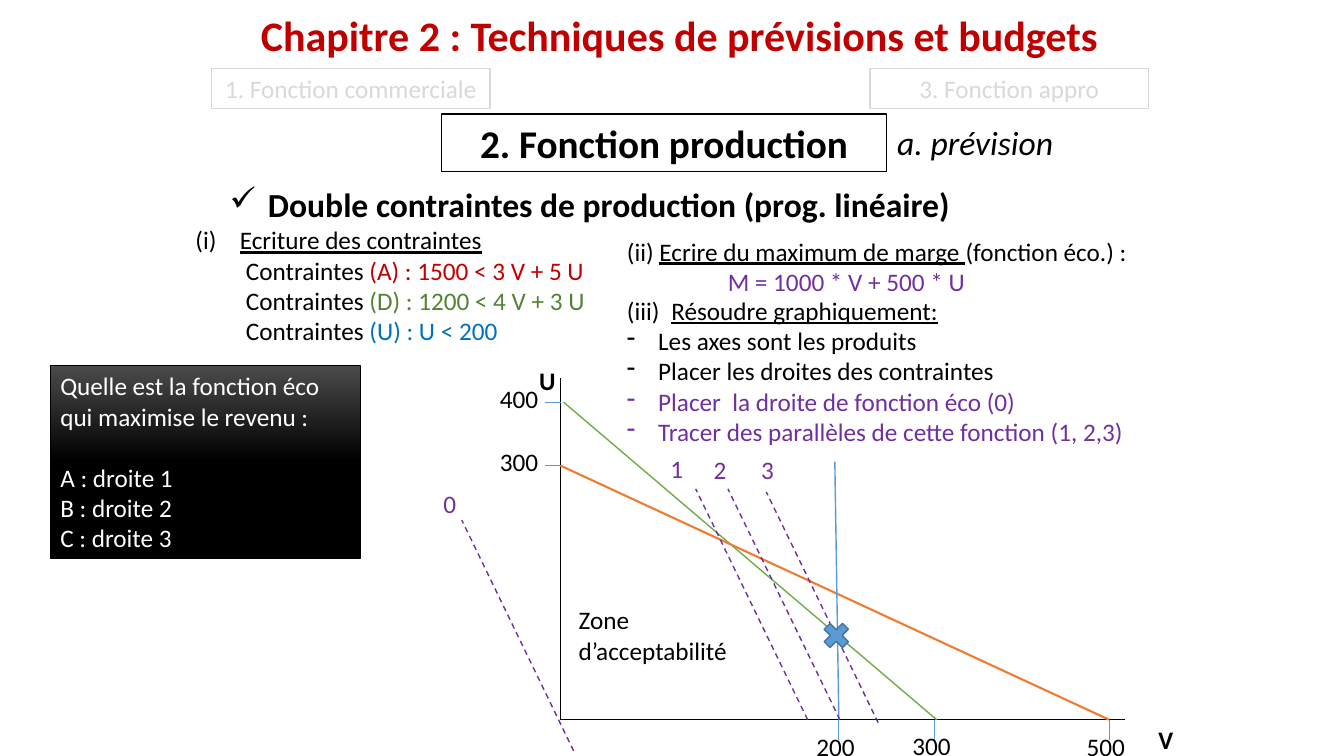
from lxml import etree
from pptx import Presentation, util as u
from pptx.dml.color import RGBColor
from pptx.enum import dml, shapes, text
from pptx.oxml.ns import qn

BLACK = RGBColor(0, 0, 0)
WHITE = RGBColor(255, 255, 255)
GREY = RGBColor(0xD9, 0xD9, 0xD9)
DARK = RGBColor(0x4B, 0x4B, 0x4B)
RED = RGBColor(0xC0, 0, 0)
MOSS = RGBColor(0x54, 0x82, 0x35)
GREEN = RGBColor(0x70, 0xAD, 0x47)
AZURE = RGBColor(0, 0x70, 0xC0)
BLUE = RGBColor(0x5B, 0x9B, 0xD5)
NAVY = RGBColor(0x43, 0x73, 0x9E)
PURPLE = RGBColor(0x70, 0x30, 0xA0)
ORANGE = RGBColor(0xED, 0x7D, 0x31)

# Content: a paragraph is (runs, layout), a run is (words, font values)
BOLD, LINE = {"bold": True}, {"underline": True}
VIOLET = {"color": PURPLE}
DASH = {"left": 0.31, "hang": 0.31, "char": "-"}
DEEP = {"left": 0.5, "level": 1}


def plain(words, font=None, **lay):
    return [(words, font or {})], lay


def limit(words, color):
    return [("Contraintes ", {}), (words, {"color": color})], DEEP


# Text boxes: place, size, paragraphs
TEXTS = [
    ((2.49, 0.05, 8.74, 0.61), 30, [
        plain("Chapitre 2 : Techniques de prévisions et budgets",
              {"bold": True, "color": RED})]),
    ((8.8, 1.16, 4.37, 0.5), 24, [plain("a. prévision", {"italic": True})]),
    ((2.18, 1.78, 9.06, 0.5), 24, [
        plain("Double contraintes de production (prog. linéaire)", BOLD,
              left=0.38, hang=0.38, char="✓")]),
    ((1.84, 2.18, 4.78, 1.31), 18, [
        plain("Ecriture des contraintes", LINE, left=0.44, hang=0.44, start=1),
        limit("(A) : 1500 < 3 V + 5 U", RED),
        limit("(D) : 1200 < 4 V + 3 U", MOSS),
        limit("(U) : U < 200", AZURE)]),
    ((6.12, 2.29, 5.43, 0.71), 18, [
        ([("(ii) ", {}), ("Ecrire du maximum de marge ", LINE),
          ("(fonction éco.) :", {})], {}),
        plain("M = 1000 * V + 500 * U", VIOLET, left=1)]),
    ((6.12, 2.88, 5.43, 1.62), 18, [
        plain("Résoudre graphiquement:", LINE, left=0.44, hang=0.44, start=3),
        plain("Les axes sont les produits", **DASH),
        plain("Placer les droites des contraintes", **DASH),
        plain("Placer  la droite de fonction éco (0)", VIOLET, **DASH),
        plain("Tracer des parallèles de cette fonction (1, 2,3)", VIOLET, **DASH)]),
    ((5.64, 5.95, 2.28, 0.71), 18, [plain("Zone"), plain("d’acceptabilité")]),
]
# Framed titles: place, size, color, words, font
TITLES = [
    ((4.38, 1.13, 4.41, 0.57), 28, BLACK, "2. Fonction production", BOLD),
    ((2.1, 0.68, 2.76, 0.4), 18, GREY, "1. Fonction commerciale", {}),
    ((8.63, 0.68, 2.76, 0.4), 18, GREY, "3. Fonction appro", {}),
]
QUIZ = [
    plain("Quelle est la fonction éco qui maximise le revenu :"),
    plain("A : droite 1", before=22),
    plain("B : droite 2"),
    plain("C : droite 3"),
]
# Graph: axes, ticks, constraints, parallel lines
OX, OY, TOP, END = 5.56, 7.14, 3.75, 11.16
UTICKS = [("400", 3.99), ("300", 4.62)]
VTICKS = [("200", 8.32, 7.21), ("300", 9.27, 7.2), ("500", 11, 7.21)]
NAMES = [("U", 5.25, 3.58), ("V", 11.39, 7.14)]
LIMITS = [
    ((5.59, 3.99), (9.29, OY), GREEN, 1),
    ((OX, 4.62), (11, OY), ORANGE, 1.5),
    ((8.32, OY), (8.28, 4.58), BLUE, 1),
]
RUN, DROP = 1.11, 2.29
MARGINS = [  # label, its place, top end of the line
    ("0", (4.3, 4.8), (4.58, 5.16)),
    ("1", (6.55, 4.45), (6.9, 4.85)),
    ("2", (6.98, 4.46), (7.22, 4.85)),
    ("3", (7.45, 4.46), (7.6, 4.88)),
]

deck = Presentation()
deck.slide_width, deck.slide_height = u.Inches(13.33), u.Inches(7.5)
slide = deck.slides.add_slide(deck.slide_layouts[6])
pen = slide.shapes


def inches(vals):
    return [u.Inches(v) for v in vals]


def layout(para, left=0, hang=0, level=0, char=None, start=None, before=0):
    para.level = level
    para.space_before = u.Pt(before)
    props = para._p.get_or_add_pPr()
    props.set("marL", str(u.Inches(left)))
    props.set("indent", str(-u.Inches(hang)))
    if char:
        etree.SubElement(props, qn("a:buChar"), char=char)
    if start:
        etree.SubElement(props, qn("a:buAutoNum"), type="romanLcParenBoth",
                         startAt=str(start))


def write(shape, paras, size, color=BLACK, align=text.PP_ALIGN.LEFT):
    frame = shape.text_frame
    frame.word_wrap = True
    frame.auto_size = text.MSO_AUTO_SIZE.SHAPE_TO_FIT_TEXT
    for i, (runs, lay) in enumerate(paras):
        para = frame.add_paragraph() if i else frame.paragraphs[0]
        para.alignment = align
        layout(para, **lay)
        for words, font in runs:
            run = para.add_run()
            run.text = words
            vals = {"name": "Calibri", "size": u.Pt(size), **font}
            run.font.color.rgb = vals.pop("color", color)
            for key, val in vals.items():
                setattr(run.font, key, val)


def note(place, paras, size=18):
    write(pen.add_textbox(*inches(place)), paras, size)


def label(x, y, words, font=None):
    note((x, y, 0.63, 0.4), [plain(words, font)])


def block(kind, place, edge, width, fill=None):
    shape = pen.add_shape(kind, *inches(place))
    shape.shadow.inherit = False
    shape.line.color.rgb = edge
    shape.line.width = u.Pt(width)
    if fill is not None:
        shape.fill.solid()
        shape.fill.fore_color.rgb = fill
    return shape


def draw(a, b, color, width, dash=None):
    line = pen.add_connector(shapes.MSO_CONNECTOR.STRAIGHT, *inches(a + b))
    etree.SubElement(line._element.spPr, qn("a:effectLst"))
    line.line.color.rgb = color
    line.line.width = u.Pt(width)
    line.line.dash_style = dash


# Titles and text
RECT = shapes.MSO_SHAPE.RECTANGLE
for place, size, color, words, font in TITLES:
    box = block(RECT, place, color, 1, WHITE)
    write(box, [plain(words, font)], size, color, text.PP_ALIGN.CENTER)
for place, size, paras in TEXTS:
    note(place, paras, size)

# Axes and ticks
draw((OX, TOP), (OX, OY), BLACK, 1)
draw((END, OY), (OX, OY), BLACK, 1)
for words, x, y in NAMES:
    label(x, y, words, BOLD)
for words, y in UTICKS:
    draw((OX - 0.15, y), (OX, y), BLUE, 0.5)
    label(4.86, y - 0.24, words)
for words, x, y in VTICKS:
    draw((x, OY + 0.2), (x, OY), BLUE, 0.5)
    label(x - 0.32, y, words)

# Constraints and parallel lines
for a, b, color, width in LIMITS:
    draw(a, b, color, width)
for words, spot, (x, y) in MARGINS:
    draw((x + RUN, y + DROP), (x, y), PURPLE, 1, dml.MSO_LINE.DASH)
    label(*spot, words, VIOLET)

# Question box
quiz = block(RECT, (0.5, 3.62, 3.07, 1.92), BLACK, 0.5)
quiz.fill.gradient()
quiz.fill.gradient_angle = 270
for stop, spot, color in zip(quiz.fill.gradient_stops, (0, 0.5), (DARK, BLACK)):
    stop.position = spot
    stop.color.rgb = color
write(quiz, QUIZ, 18, WHITE)

# Best point
block(shapes.MSO_SHAPE.MATH_MULTIPLY, (8.12, 6.13, 0.35, 0.35), NAVY, 1, BLUE)

deck.save("out.pptx")
